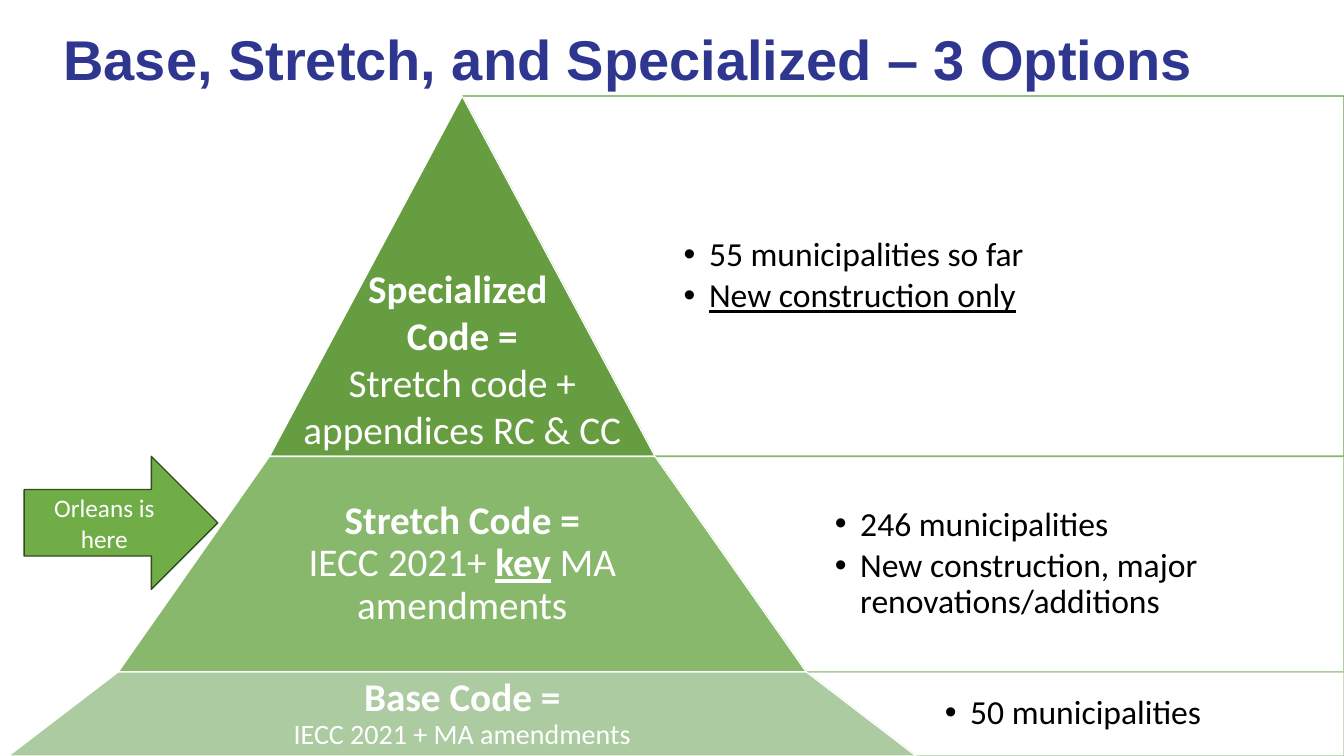
from lxml import etree
from pptx import Presentation
from pptx import util as u
from pptx.dml.color import RGBColor
from pptx.enum import shapes, text
from pptx.oxml import ns

NAVY = RGBColor(0x2E, 0x36, 0x90)
WHITE = RGBColor(0xFF, 0xFF, 0xFF)
BLACK = RGBColor(0, 0, 0)
DARK = RGBColor(0x66, 0x9D, 0x40)
MID = RGBColor(0x87, 0xB8, 0x6B)
PALE = RGBColor(0xAD, 0xCB, 0xA0)
LEAF = RGBColor(0x70, 0xAD, 0x47)
EDGE = RGBColor(0x31, 0x4C, 0x1F)

WIDE, HIGH = 33.87, 19.05
AXIS = 11.65
LEVELS = [(2.42, 0), (11.5, 4.86), (16.93, 8.67), (HIGH, 11.44)]

BREAK = ("\n", "")
TIERS = [
    (DARK, 0.1, 1, text.MSO_ANCHOR.BOTTOM,
     [[("Specialized ", "b"), BREAK, ("Code =", "b")],
      [("Stretch code + appendices RC & CC", "")]],
     28, [("55 municipalities so far", ""), ("New construction only", "u")]),
    (MID, 3.18, 0.9, text.MSO_ANCHOR.MIDDLE,
     [[("Stretch Code =", "b"), BREAK, ("IECC 2021+ ", ""),
       ("key", "bu"), (" MA amendments", "")]],
     28, [("246 municipalities", ""),
          ("New construction, major renovations/additions", "")]),
    (PALE, 4.14, 0.9, text.MSO_ANCHOR.MIDDLE,
     [[("Base Code =", "b"), BREAK, ("IECC 2021 + MA amendments", "")]],
     20, [("50 municipalities", "")]),
]


def paint(shape, fill, line):
    shape.shadow.inherit = False
    shape.fill.solid()
    shape.fill.fore_color.rgb = fill
    shape.line.color.rgb = line
    shape.line.width = u.Pt(1)


def fade(shape, share):
    color = shape._element.spPr.find(ns.qn("a:solidFill"))[0]
    etree.SubElement(color, ns.qn("a:alpha"), val=str(share * 1000))


def outline(slide, points):
    start, *rest = [(u.Cm(x), u.Cm(y)) for x, y in points]
    pen = slide.shapes.build_freeform(*start)
    pen.add_line_segments(rest, close=True)
    return pen.convert_to_shape()


def frame(shape, anchor, left, top, right, bottom):
    body = shape.text_frame
    body.word_wrap = True
    body.vertical_anchor = anchor
    body.margin_left, body.margin_top = u.Cm(left), u.Cm(top)
    body.margin_right, body.margin_bottom = u.Cm(right), u.Cm(bottom)
    return body


def lines(body, count):
    return [body.paragraphs[0]] + [body.add_paragraph() for _ in range(count - 1)]


def style(para, size, color, align, name="Calibri"):
    para.alignment = align
    para.font.name = name
    para.font.size = u.Pt(size)
    para.font.color.rgb = color


def write(para, runs):
    for words, marks in runs:
        if words == "\n":
            para.add_line_break()
            continue
        run = para.add_run()
        run.text = words
        if "b" in marks:
            run.font.bold = True
        if "u" in marks:
            run.font.underline = True
        yield run


def bullet(para):
    props = para._p.get_or_add_pPr()
    props.set("marL", str(u.Cm(0.64)))
    props.set("indent", str(-u.Cm(0.64)))
    etree.SubElement(props, ns.qn("a:buFont"), typeface="Arial")
    etree.SubElement(props, ns.qn("a:buChar"), char="•")


def title(slide, left, top, width, height):
    box = slide.shapes.add_textbox(u.Cm(left), u.Cm(top), u.Cm(width), u.Cm(height))
    body = frame(box, text.MSO_ANCHOR.BOTTOM, 0.25, 0.13, 0.25, 0.13)
    para = body.paragraphs[0]
    para.text = "Base, Stretch, and Specialized – 3 Options"
    para.line_spacing = 0.8
    style(para, 40, NAVY, text.PP_ALIGN.LEFT, "Arial")
    para.font.bold = True


def panel(slide, upper, lower, color, notes):
    (top, near), (base, far) = upper, lower
    shape = outline(slide, [(WIDE, top), (WIDE, base), (AXIS + far, base),
                            (AXIS + near, top)])
    paint(shape, WHITE, color)
    fade(shape, 90)
    body = frame(shape, text.MSO_ANCHOR.MIDDLE, far - near + 0.72, 0.69, 0.69, 0.69)
    for para, note in zip(lines(body, len(notes)), notes):
        bullet(para)
        para.line_spacing = 0.9
        para.space_after = u.Pt(3.6)
        style(para, 24, BLACK, text.PP_ALIGN.LEFT)
        list(write(para, [note]))


def tier(slide, upper, lower, color, inset, pitch, anchor, paras, small):
    (top, near), (base, far) = upper, lower
    shape = outline(slide, [(AXIS - far, base), (AXIS - near, top),
                            (AXIS + near, top), (AXIS + far, base)])
    paint(shape, color, WHITE)
    body = frame(shape, anchor, inset, 0.1, inset, 0.1)
    for para, runs in zip(lines(body, len(paras)), paras):
        para.line_spacing = pitch
        style(para, 28, WHITE, text.PP_ALIGN.CENTER)
        last = list(write(para, runs))[-1]
        if small != 28:
            last.font.size = u.Pt(small)


def pyramid(slide):
    for upper, lower, row in zip(LEVELS, LEVELS[1:], TIERS):
        panel(slide, upper, lower, row[0], row[-1])
        tier(slide, upper, lower, *row[:-1])


def marker(slide, left, top, width, height):
    arrow = slide.shapes.add_shape(shapes.MSO_SHAPE.RIGHT_ARROW, u.Cm(left),
                                   u.Cm(top), u.Cm(width), u.Cm(height))
    paint(arrow, LEAF, EDGE)
    body = frame(arrow, text.MSO_ANCHOR.MIDDLE, 0.25, 0.13, 0.25, 0.13)
    para = body.paragraphs[0]
    para.text = "Orleans is here"
    style(para, 18, WHITE, text.PP_ALIGN.CENTER)


def main():
    deck = Presentation()
    deck.slide_width, deck.slide_height = u.Cm(WIDE), u.Cm(HIGH)
    slide = deck.slides.add_slide(deck.slide_layouts[6])
    title(slide, 1.35, 0.74, 31.75, 1.68)
    pyramid(slide)
    marker(slide, 0.61, 11.5, 4.88, 3.35)
    deck.save("out.pptx")


if __name__ == "__main__":
    main()
